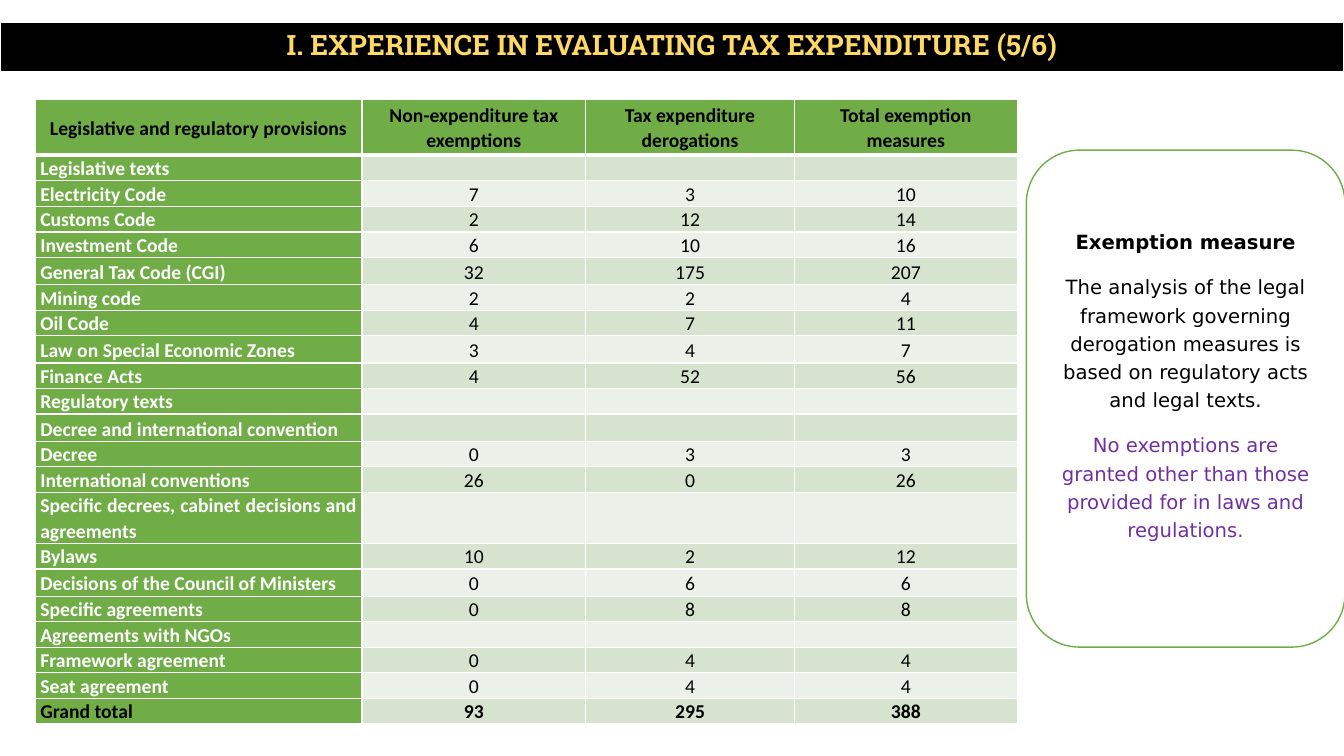
from lxml import etree
from pptx import Presentation
from pptx.dml.color import RGBColor
from pptx.enum import shapes, text
from pptx.oxml import ns
from pptx.util import Inches, Pt

# Content
TITLE = "I. EXPERIENCE IN EVALUATING TAX EXPENDITURE (5/6)"
HEADERS = ["Legislative and regulatory provisions", "Non-expenditure tax exemptions",
           "Tax expenditure derogations", "Total exemption measures"]
PROVISIONS = [
    ("Legislative texts",),
    ("Electricity Code", 7, 3, 10),
    ("Customs Code", 2, 12, 14),
    ("Investment Code", 6, 10, 16),
    ("General Tax Code (CGI)", 32, 175, 207),
    ("Mining code", 2, 2, 4),
    ("Oil Code", 4, 7, 11),
    ("Law on Special Economic Zones", 3, 4, 7),
    ("Finance Acts", 4, 52, 56),
    ("Regulatory texts",),
    ("Decree and international convention",),
    ("Decree", 0, 3, 3),
    ("International conventions", 26, 0, 26),
    ("Specific decrees, cabinet decisions and agreements",),
    ("Bylaws", 10, 2, 12),
    ("Decisions of the Council of Ministers", 0, 6, 6),
    ("Specific agreements", 0, 8, 8),
    ("Agreements with NGOs",),
    ("Framework agreement", 0, 4, 4),
    ("Seat agreement", 0, 4, 4),
    ("Grand total", 93, 295, 388),
]
BLACK = RGBColor(0x00, 0x00, 0x00)
WHITE = RGBColor(0xFF, 0xFF, 0xFF)
GOLD = RGBColor(0xFF, 0xD9, 0x66)
GREEN = RGBColor(0x70, 0xAD, 0x47)
BAND_DARK = RGBColor(0xD5, 0xE3, 0xCF)
BAND_LIGHT = RGBColor(0xEB, 0xF1, 0xE9)
PURPLE = RGBColor(0x70, 0x30, 0xA0)
# Text, bold, colour
NOTE = [
    ("Exemption measure", True, BLACK),
    ("The analysis of the legal framework governing derogation measures is "
     "based on regulatory acts and legal texts.", False, BLACK),
    ("No exemptions are granted other than those provided for in laws and "
     "regulations.", False, PURPLE),
]
COLUMN_WIDTHS = [3.24, 2.22, 2.07, 2.21]
HEADER_HEIGHT, ROW_HEIGHT = 0.55, 0.25
TALL_ROWS = {5: 0.27, 8: 0.27, 11: 0.27, 14: 0.5, 16: 0.27}
CENTER, JUSTIFY = text.PP_ALIGN.CENTER, text.PP_ALIGN.JUSTIFY


def add_run(paragraph, words, font_name, size, bold, color):
    run = paragraph.add_run()
    run.text = words
    run.font.name = font_name
    run.font.size = Pt(size)
    run.font.bold = bold
    run.font.color.rgb = color


def add_panel(slide, kind, box, fill, line, width):
    shape = slide.shapes.add_shape(kind, *map(Inches, box))
    shape.shadow.inherit = False
    shape.fill.solid()
    shape.fill.fore_color.rgb = fill
    shape.line.color.rgb = line
    shape.line.width = Pt(width)
    shape.text_frame.word_wrap = True
    return shape


def set_borders(cell, top, bottom):
    properties = cell._tc.get_or_add_tcPr()
    widths = [("lnL", 1), ("lnR", 1), ("lnT", top), ("lnB", bottom)]
    for position, (tag, points) in enumerate(widths):
        line = etree.Element(ns.qn(f"a:{tag}"), w=str(Pt(points)))
        fill = etree.SubElement(line, ns.qn("a:solidFill"))
        etree.SubElement(fill, ns.qn("a:srgbClr"), val=str(WHITE))
        properties.insert(position, line)


def fill_cell(cell, row, column, words):
    total = row == len(PROVISIONS)
    heading = row == 0
    cell.fill.solid()
    band = BAND_DARK if row % 2 else BAND_LIGHT
    cell.fill.fore_color.rgb = GREEN if heading or column == 0 else band
    set_borders(cell, 3 if row == 1 else 1, 3 if heading else 1)
    cell.margin_left = cell.margin_right = Inches(0.05)
    cell.margin_top = cell.margin_bottom = 0
    cell.vertical_anchor = text.MSO_ANCHOR.MIDDLE if heading else text.MSO_ANCHOR.BOTTOM
    paragraph = cell.text_frame.paragraphs[0]
    if words == "":
        # Small end mark keeps an empty row from growing
        etree.SubElement(paragraph._p, ns.qn("a:endParaRPr"), sz="1000")
        return
    paragraph.alignment = JUSTIFY if column == 0 and not heading else CENTER
    paragraph.line_spacing = 1.07
    paragraph.space_after = Pt(8)
    color = WHITE if column == 0 and not heading and not total else BLACK
    add_run(paragraph, str(words), "Calibri", 14, heading or total or column == 0, color)


def main():
    presentation = Presentation()
    presentation.slide_width, presentation.slide_height = Inches(13.33), Inches(7.5)
    slide = presentation.slides.add_slide(presentation.slide_layouts[6])

    # Title band
    band = add_panel(slide, shapes.MSO_SHAPE.RECTANGLE, (0, 0.22, 13.33, 0.5),
                     BLACK, WHITE, 1.5)
    band.text_frame.vertical_anchor = text.MSO_ANCHOR.TOP
    paragraph = band.text_frame.paragraphs[0]
    paragraph.alignment = CENTER
    add_run(paragraph, TITLE, "Roboto Slab", 20, True, GOLD)

    # Table of provisions
    rows = [HEADERS] + PROVISIONS
    heights = [HEADER_HEIGHT] + [TALL_ROWS.get(row, ROW_HEIGHT) for row in range(1, len(rows))]
    table = slide.shapes.add_table(
        len(rows), len(HEADERS), Inches(0.35), Inches(0.99),
        Inches(sum(COLUMN_WIDTHS)), Inches(sum(heights))).table
    for column, width in enumerate(COLUMN_WIDTHS):
        table.columns[column].width = Inches(width)
    for row, values in enumerate(rows):
        table.rows[row].height = Inches(heights[row])
        for column in range(len(HEADERS)):
            words = values[column] if column < len(values) else ""
            fill_cell(table.cell(row, column), row, column, words)

    # Side note, raised slightly by its bottom margin
    note = add_panel(slide, shapes.MSO_SHAPE.ROUNDED_RECTANGLE, (10.18, 1.49, 3.16, 4.93),
                     WHITE, GREEN, 1)
    frame = note.text_frame
    frame.vertical_anchor = text.MSO_ANCHOR.MIDDLE
    frame.margin_bottom = Inches(0.35)
    for index, (words, bold, color) in enumerate(NOTE):
        paragraph = frame.add_paragraph() if index else frame.paragraphs[0]
        paragraph.alignment = CENTER
        paragraph.line_spacing = 1.2
        paragraph.space_before = paragraph.space_after = Pt(6)
        add_run(paragraph, words, "DejaVu Sans", 14, bold, color)

    presentation.save("out.pptx")


if __name__ == "__main__":
    main()
